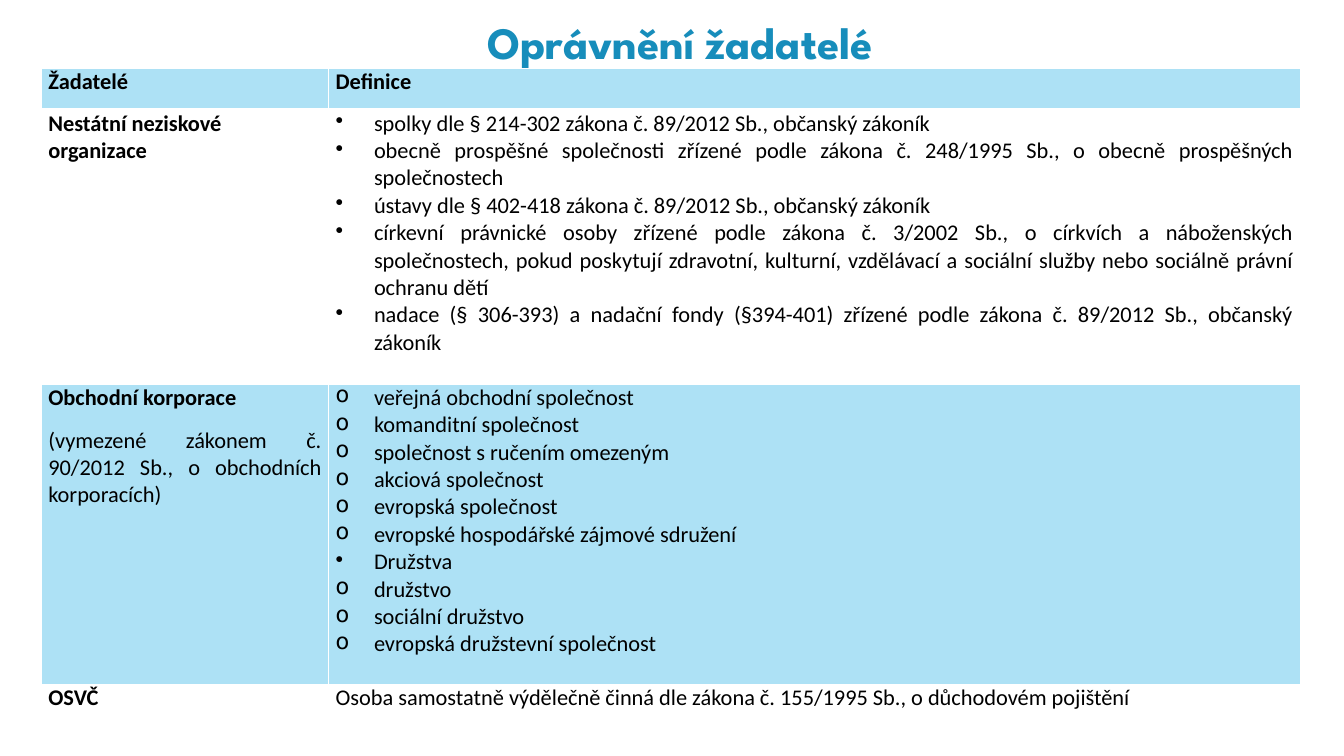
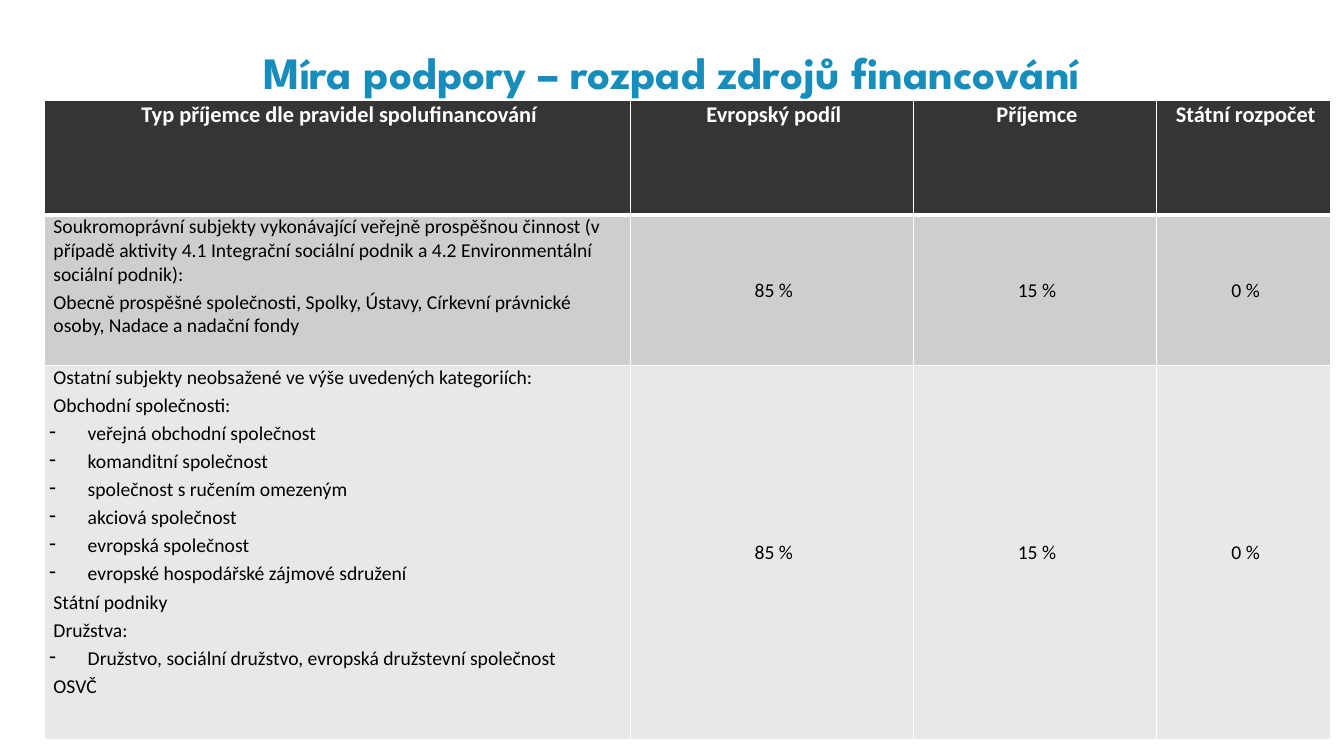
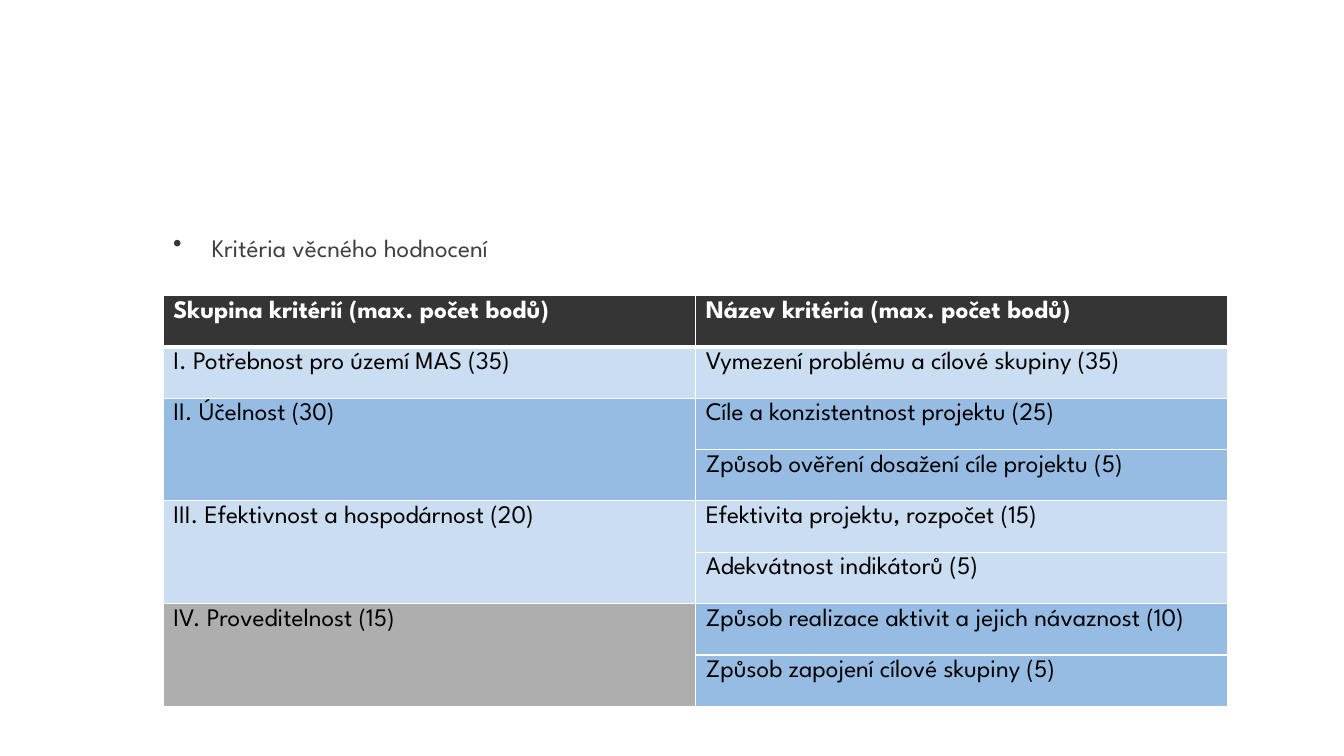
from lxml import etree
from pptx import Presentation
from pptx.dml.color import RGBColor
from pptx.enum.text import MSO_ANCHOR, MSO_AUTO_SIZE, PP_ALIGN
from pptx.oxml.ns import qn
from pptx.util import Inches, Pt

LEFT, MID, JUST = PP_ALIGN.LEFT, PP_ALIGN.CENTER, PP_ALIGN.JUSTIFY
TOP, CENTRE = MSO_ANCHOR.TOP, MSO_ANCHOR.MIDDLE
FIXED = MSO_AUTO_SIZE.NONE

BLACK = RGBColor(0x00, 0x00, 0x00)
WHITE = RGBColor(0xFF, 0xFF, 0xFF)
DARK = RGBColor(0x35, 0x35, 0x35)
INK = RGBColor(0x40, 0x40, 0x40)
TEAL = RGBColor(0x17, 0x8D, 0xBB)
SKY = RGBColor(0xAD, 0xE1, 0xF5)
GREY = RGBColor(0xCE, 0xCE, 0xCE)
MIST = RGBColor(0xE8, 0xE8, 0xE8)
STEEL = RGBColor(0xAE, 0xAE, 0xAE)
PALE = RGBColor(0xCB, 0xDD, 0xF1)
BLUE = RGBColor(0x97, 0xBC, 0xE4)

HEAD = "League Spartan"
BODY = "Calibri"
HANG = Inches(0.38)
TITLE_ONLY, BLANK = 5, 6


def style(par, size, font, color, bold=False):
    for run in par.runs:
        run.font.size, run.font.name = Pt(size), font
        run.font.bold = bold
        run.font.color.rgb = color


def indent(par, left, mark=None, tint=None):
    """Set the left indent, hanging behind a bullet if there is a mark."""
    props = par._p.get_or_add_pPr()
    props.set("marL", str(left))
    props.set("indent", str(-left if mark else 0))
    if tint is not None:
        color = etree.SubElement(props, qn("a:buClr"))
        etree.SubElement(color, qn("a:srgbClr")).set("val", str(tint))
    if mark:
        etree.SubElement(props, qn("a:buChar")).set("char", mark)


def marks(mark, *items):
    return [(mark, item) for item in items]


def write(cell, lines, size, font, color, bold=False, align=LEFT,
          before=0, after=0, left=0):
    """Fill a cell with lines, each plain text or a (mark, text) pair."""
    lines = [lines] if isinstance(lines, str) else lines
    frame = cell.text_frame
    for i, line in enumerate(lines):
        par = frame.add_paragraph() if i else frame.paragraphs[0]
        mark, text = (None, line) if isinstance(line, str) else line
        par.text = text
        par.alignment = align
        par.space_before = Pt(before if i else 0)
        par.space_after = Pt(0 if mark else after)
        indent(par, HANG if mark else left, mark)
        style(par, size, font, color, bold)


def paint(cell, fill, base=1):
    """Draw white borders, the lower one base points wide, then the fill."""
    props = cell._tc.get_or_add_tcPr()
    for side, width in (("L", 1), ("R", 1), ("T", 1), ("B", base)):
        line = etree.SubElement(props, qn(f"a:ln{side}"), w=str(Pt(width)))
        solid = etree.SubElement(line, qn("a:solidFill"))
        etree.SubElement(solid, qn("a:srgbClr")).set("val", str(WHITE))
    if fill is None:
        cell.fill.background()
    else:
        cell.fill.solid()
        cell.fill.fore_color.rgb = fill


def add_grid(slide, left, top, cols, rows, pad=None):
    """Add a plain table from column widths and row heights in inches."""
    frame = slide.shapes.add_table(
        len(rows), len(cols), Inches(left), Inches(top),
        Inches(sum(cols)), Inches(sum(rows)))
    grid = frame.table
    grid.first_row = grid.horz_banding = False
    for col, width in zip(grid.columns, cols):
        col.width = Inches(width)
    for row, height in zip(grid.rows, rows):
        row.height = Inches(height)
    if pad is not None:
        for cell in grid.iter_cells():
            cell.margin_left = cell.margin_right = Inches(pad)
            cell.margin_top = cell.margin_bottom = 0
    return grid


def add_title(slide, text, left, top, width, height):
    title = slide.shapes.title
    title.left, title.top = Inches(left), Inches(top)
    title.width, title.height = Inches(width), Inches(height)
    frame = title.text_frame
    frame.text = text
    frame.word_wrap = True
    frame.auto_size = FIXED
    frame.vertical_anchor = TOP
    frame.margin_top = Inches(0.15)
    par = frame.paragraphs[0]
    par.alignment = MID
    style(par, 32, HEAD, TEAL, True)


def applicants(deck):
    slide = deck.slides.add_slide(deck.slide_layouts[TITLE_ONLY])
    add_title(slide, "Oprávnění žadatelé", 0, 0, 13.5, 0.79)
    groups = [
        ("Žadatelé", "Definice"),
        ("Nestátní neziskové organizace", marks(
            "•",
            "spolky dle § 214-302 zákona č. 89/2012 Sb., občanský zákoník",
            "obecně prospěšné společnosti zřízené podle zákona č. 248/1995 "
            "Sb., o obecně prospěšných společnostech",
            "ústavy dle § 402-418 zákona č. 89/2012 Sb., občanský zákoník",
            "církevní právnické osoby zřízené podle zákona č. 3/2002 Sb., "
            "o církvích a náboženských společnostech, pokud poskytují "
            "zdravotní, kulturní, vzdělávací a sociální služby nebo "
            "sociálně právní ochranu dětí",
            "nadace (§ 306-393) a nadační fondy (§394-401) zřízené podle "
            "zákona č. 89/2012 Sb., občanský zákoník")),
        (["Obchodní korporace",
          "(vymezené zákonem č. 90/2012 Sb., o obchodních korporacích)"],
         marks("o", "veřejná obchodní společnost", "komanditní společnost",
               "společnost s ručením omezeným", "akciová společnost",
               "evropská společnost",
               "evropské hospodářské zájmové sdružení")
         + marks("•", "Družstva")
         + marks("o", "družstvo", "sociální družstvo",
                 "evropská družstevní společnost")),
        ("OSVČ", "Osoba samostatně výdělečně činná dle zákona "
                 "č. 155/1995 Sb., o důchodovém pojištění"),
    ]
    grid = add_grid(slide, 0.41, 0.68, [2.85, 9.64],
                    [0.41, 2.72, 2.98, 0.47], 0.07)
    for r, (name, rule) in enumerate(groups):
        for c, lines in enumerate((name, rule)):
            cell = grid.cell(r, c)
            align = LEFT if (r, c) == (1, 0) else JUST
            write(cell, lines, 16, BODY, BLACK, r == 0 or c == 0, align,
                  after=11)
            paint(cell, None if r % 2 else SKY, 1 if r else 3)
    style(grid.cell(2, 0).text_frame.paragraphs[1], 16, BODY, BLACK)


def funding(deck):
    slide = deck.slides.add_slide(deck.slide_layouts[TITLE_ONLY])
    add_title(slide, "Míra podpory – rozpad zdrojů financování",
              0, 0.29, 13.33, 0.94)
    shares = ("85 %", "15 %", "0 %")
    private = [
        "Soukromoprávní subjekty vykonávající veřejně prospěšnou činnost "
        "(v případě aktivity 4.1 Integrační sociální podnik a 4.2 "
        "Environmentální sociální podnik):",
        "Obecně prospěšné společnosti, Spolky, Ústavy, Církevní právnické "
        "osoby, Nadace a nadační fondy"]
    others = [
        "Ostatní subjekty neobsažené ve výše uvedených kategoriích:",
        "Obchodní společnosti:",
        *marks("-", "veřejná obchodní společnost", "komanditní společnost",
               "společnost s ručením omezeným", "akciová společnost",
               "evropská společnost",
               "evropské hospodářské zájmové sdružení"),
        "Státní podniky",
        "Družstva:",
        *marks("-", "Družstvo, sociální družstvo, "
                    "evropská družstevní společnost"),
        "OSVČ"]
    rows = [
        (DARK, ("Typ příjemce dle pravidel spolufinancování",
                "Evropský podíl", "Příjemce", "Státní rozpočet")),
        (GREY, (private, *shares)),
        (MIST, (others, *shares)),
    ]
    grid = add_grid(slide, 0.44, 1, [5.81, 2.81, 2.41, 1.73],
                    [1.13, 1.5, 3.71], 0.05)
    for r, (fill, texts) in enumerate(rows):
        size, color = (14, BLACK) if r else (16, WHITE)
        for c, lines in enumerate(texts):
            cell = grid.cell(r, c)
            write(cell, lines, size, BODY, color, r == 0,
                  LEFT if r and not c else MID, before=3, left=Inches(0.04))
            if r and c:
                cell.vertical_anchor = CENTRE
            paint(cell, fill, 1 if r else 3)


def add_lead(slide, text, left, top, width, height):
    box = slide.shapes.add_textbox(Inches(left), Inches(top),
                                   Inches(width), Inches(height))
    frame = box.text_frame
    frame.word_wrap = True
    frame.margin_top = Inches(0.1)
    frame.text = text
    par = frame.paragraphs[0]
    indent(par, HANG, "•", DARK)
    style(par, 18, HEAD, INK)


def criteria(deck):
    slide = deck.slides.add_slide(deck.slide_layouts[BLANK])
    add_lead(slide, "Kritéria věcného hodnocení", 1.62, 2.2, 10.96, 0.73)
    groups = [
        ("Skupina kritérií (max. počet bodů)", DARK, DARK,
         ["Název kritéria (max. počet bodů)"]),
        ("I. Potřebnost pro území MAS (35)", PALE, PALE,
         ["Vymezení problému a cílové skupiny (35)"]),
        ("II. Účelnost (30)", BLUE, BLUE,
         ["Cíle a konzistentnost projektu (25)",
          "Způsob ověření dosažení cíle projektu (5)"]),
        ("III. Efektivnost a hospodárnost (20)", PALE, PALE,
         ["Efektivita projektu, rozpočet (15)",
          "Adekvátnost indikátorů (5)"]),
        ("IV. Proveditelnost (15)", STEEL, BLUE,
         ["Způsob realizace aktivit a jejich návaznost (10)",
          "Způsob zapojení cílové skupiny (5)"]),
    ]
    count = sum(len(items) for *_, items in groups)
    grid = add_grid(slide, 1.62, 2.93, [5.28] * 2, [0.51] * count)
    r = 0
    for name, shade, fill, items in groups:
        first = r == 0
        look = (18, HEAD, WHITE if first else BLACK, first)
        base = 3 if first else 1
        last = r + len(items) - 1
        if last > r:
            grid.cell(r, 0).merge(grid.cell(last, 0))
        write(grid.cell(r, 0), name, *look)
        for item in items:
            paint(grid.cell(r, 0), shade, base)
            write(grid.cell(r, 1), item, *look)
            paint(grid.cell(r, 1), fill, base)
            r += 1


def main():
    deck = Presentation()
    deck.slide_width, deck.slide_height = Inches(13.33), Inches(7.5)
    applicants(deck)
    funding(deck)
    criteria(deck)
    deck.save("out.pptx")


if __name__ == "__main__":
    main()
